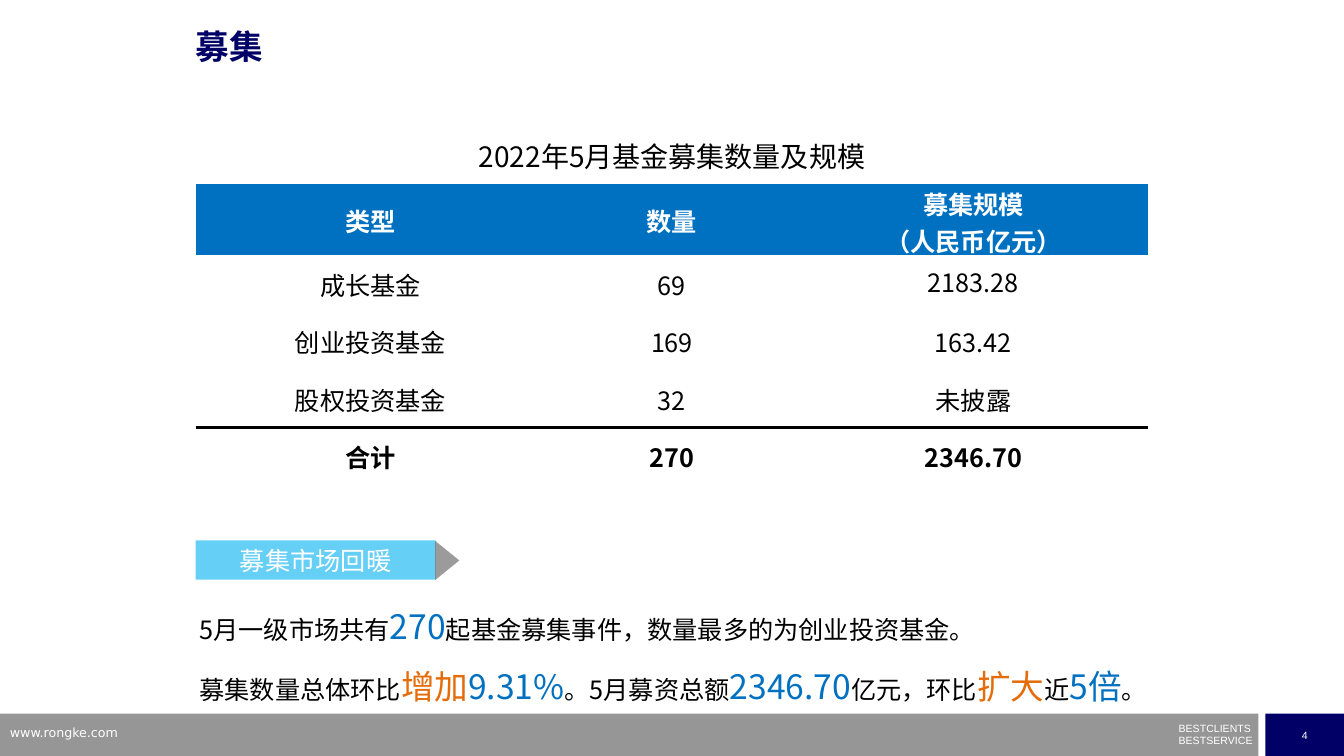
from pptx import Presentation
from pptx.dml.color import RGBColor
from pptx.enum.shapes import MSO_SHAPE
from pptx.enum.text import MSO_ANCHOR, PP_ALIGN
from pptx.oxml.ns import qn
from pptx.util import Inches, Pt
from lxml.etree import SubElement

SANS = "Noto Sans CJK SC"
WHITE = RGBColor(0xFF, 0xFF, 0xFF)
BLACK = RGBColor(0, 0, 0)
NAVY = RGBColor(0, 0, 0x66)
GRAY = RGBColor(0x96, 0x96, 0x96)
DARK = RGBColor(0x59, 0x59, 0x59)
SKY = RGBColor(0, 0xB0, 0xF0)
BLUE = RGBColor(0, 0x70, 0xC0)
ORANGE = RGBColor(0xE4, 0x6C, 0x0A)
PLAIN_STYLE = "{2D5ABB26-0587-4C30-8999-92F81FD0307C}"

ROWS = [
    ("2022年5月基金募集数量及规模", "", ""),
    ("类型", "数量", "募集规模\v（人民币亿元）"),
    ("成长基金", "69", "2183.28"),
    ("创业投资基金", "169", "163.42"),
    ("股权投资基金", "32", "未披露"),
    ("合计", "270", "2346.70"),
]
# Each run is text and, for a large figure, its colour
SUMMARY = [
    [("5月一级市场共有", None), ("270", BLUE),
     ("起基金募集事件，数量最多的为创业投资基金。", None)],
    [("募集数量总体环比", None), ("增加", ORANGE), ("9.31%", BLUE),
     ("。5月募资总额", None), ("2346.70", BLUE), ("亿元，环比", None),
     ("扩大", ORANGE), ("近", None), ("5倍", BLUE), ("。", None)],
]


def style(font, size, color, name=SANS, bold=False):
    font.size, font.bold, font.name = Pt(size), bold, name
    font.color.rgb = color
    if name == SANS:
        # East Asian typeface follows the Latin one
        latin = font._element.find(qn("a:latin"))
        east = latin.makeelement(qn("a:ea"), {"typeface": name})
        latin.addnext(east)


def place(shape, box):
    shape.left, shape.top, shape.width, shape.height = map(Inches, box)


def clear(frame):
    frame.margin_left = frame.margin_right = 0
    frame.margin_top = frame.margin_bottom = 0


def add_block(slide, kind, box, fill, alpha=None):
    block = slide.shapes.add_shape(kind, *map(Inches, box))
    block.shadow.inherit = False
    block.line.fill.background()
    block.fill.solid()
    block.fill.fore_color.rgb = fill
    if alpha:
        color = block.fill._xPr.find(qn("a:solidFill"))[0]
        SubElement(color, qn("a:alpha"), val=str(alpha * 1000))
    return block


def label(block, text, size, name=SANS):
    frame = block.text_frame
    frame.vertical_anchor = MSO_ANCHOR.MIDDLE
    para = frame.paragraphs[0]
    para.text = text
    para.alignment = PP_ALIGN.CENTER
    style(para.font, size, WHITE, name)


def add_text(slide, box, lines, size, name):
    frame = slide.shapes.add_textbox(*map(Inches, box)).text_frame
    frame.word_wrap = True
    for i, line in enumerate(lines):
        para = frame.add_paragraph() if i else frame.paragraphs[0]
        para.text = line
        style(para.font, size, WHITE, name)
    return frame


def add_footer(slide):
    add_block(slide, MSO_SHAPE.RECTANGLE, (0, 7.08, 12.48, 0.42), GRAY)
    page = add_block(slide, MSO_SHAPE.RECTANGLE, (12.55, 7.08, 0.78, 0.42), NAVY)
    label(page, "4", 7.5, "Arial")
    motto = add_text(slide, (11.69, 7.22, 0.76, 0.2),
                     ["BESTCLIENTS", "BESTSERVICE"], 7.5, "Arial")
    clear(motto)
    for para in motto.paragraphs:
        para.line_spacing = 0.5
    motto.paragraphs[1].space_before = Pt(4)
    add_text(slide, (0, 7.14, 3.2, 0.26), ["www.rongke.com"], 9, "DejaVu Sans")


def add_title(slide):
    title = slide.shapes.title
    place(title, (1.94, 0.3, 9, 0.39))
    frame = title.text_frame
    clear(frame)
    frame.vertical_anchor = MSO_ANCHOR.TOP
    para = frame.paragraphs[0]
    para.text = "募集"
    para.alignment = PP_ALIGN.LEFT
    para.line_spacing = 0.9
    style(para.font, 24, NAVY, bold=True)


def add_rule(cell, side):
    line = cell._tc.get_or_add_tcPr().makeelement(
        qn("a:" + side), {"w": str(Pt(2.25))})
    fill = SubElement(line, qn("a:solidFill"))
    SubElement(fill, qn("a:srgbClr"), val=str(BLACK))
    cell._tc.tcPr.insert(0, line)


def fill_cell(cell, text, row):
    head, total = row == 1, row == len(ROWS) - 1
    cell.margin_left = cell.margin_right = cell.margin_top = Inches(0.01)
    cell.margin_bottom = Inches(0.05 if text == "2183.28" else 0)
    cell.vertical_anchor = MSO_ANCHOR.MIDDLE
    if head:
        cell.fill.solid()
        cell.fill.fore_color.rgb = BLUE
    else:
        cell.fill.background()
    para = cell.text_frame.paragraphs[0]
    para.text = text
    para.alignment = PP_ALIGN.CENTER
    style(para.font, 18 if row else 20, WHITE if head else BLACK,
          bold=head or total)
    # Rule above the total
    if total:
        add_rule(cell, "lnT")
    elif row == len(ROWS) - 2:
        add_rule(cell, "lnB")


def add_funds(slide):
    table = slide.shapes.add_table(
        len(ROWS), 3, *map(Inches, (1.94, 1.25, 9.45, 3.57))).table
    table.first_row = table.horz_banding = False
    table._tbl.tblPr.find(qn("a:tableStyleId")).text = PLAIN_STYLE
    for col, width in zip(table.columns, (3.47, 2.51, 3.47)):
        col.width = Inches(width)
    for row, height in zip(table.rows, (0.58, 0.7) + (0.57,) * 4):
        row.height = Inches(height)
    table.cell(0, 0).merge(table.cell(0, 2))
    for r, texts in enumerate(ROWS):
        for c, text in enumerate(texts):
            fill_cell(table.cell(r, c), text, r)


def add_banner(slide):
    banner = add_block(slide, MSO_SHAPE.RECTANGLE, (1.94, 5.36, 2.38, 0.39), SKY, 60)
    label(banner, "募集市场回暖", 18)
    tip = add_block(slide, MSO_SHAPE.ISOSCELES_TRIANGLE,
                    (4.24, 5.44, 0.39, 0.24), DARK, 60)
    tip.rotation = 90


def add_summary(slide):
    box = slide.shapes.add_textbox(*map(Inches, (1.38, 5.76, 11.04, 1.31)))
    frame = box.text_frame
    frame.word_wrap = True
    for i, runs in enumerate(SUMMARY):
        para = frame.add_paragraph() if i else frame.paragraphs[0]
        para.alignment = PP_ALIGN.JUSTIFY
        para.line_spacing = 1.5
        para._p.get_or_add_pPr().set("indent", str(Inches(0.5)))
        for text, color in runs:
            run = para.add_run()
            run.text = text
            style(run.font, 24 if color else 18, color or BLACK)


def main():
    deck = Presentation()
    deck.slide_width, deck.slide_height = Inches(13.33), Inches(7.5)
    slide = deck.slides.add_slide(deck.slide_layouts[5])
    add_footer(slide)
    add_summary(slide)
    add_title(slide)
    add_banner(slide)
    add_funds(slide)
    deck.save("out.pptx")


if __name__ == "__main__":
    main()
